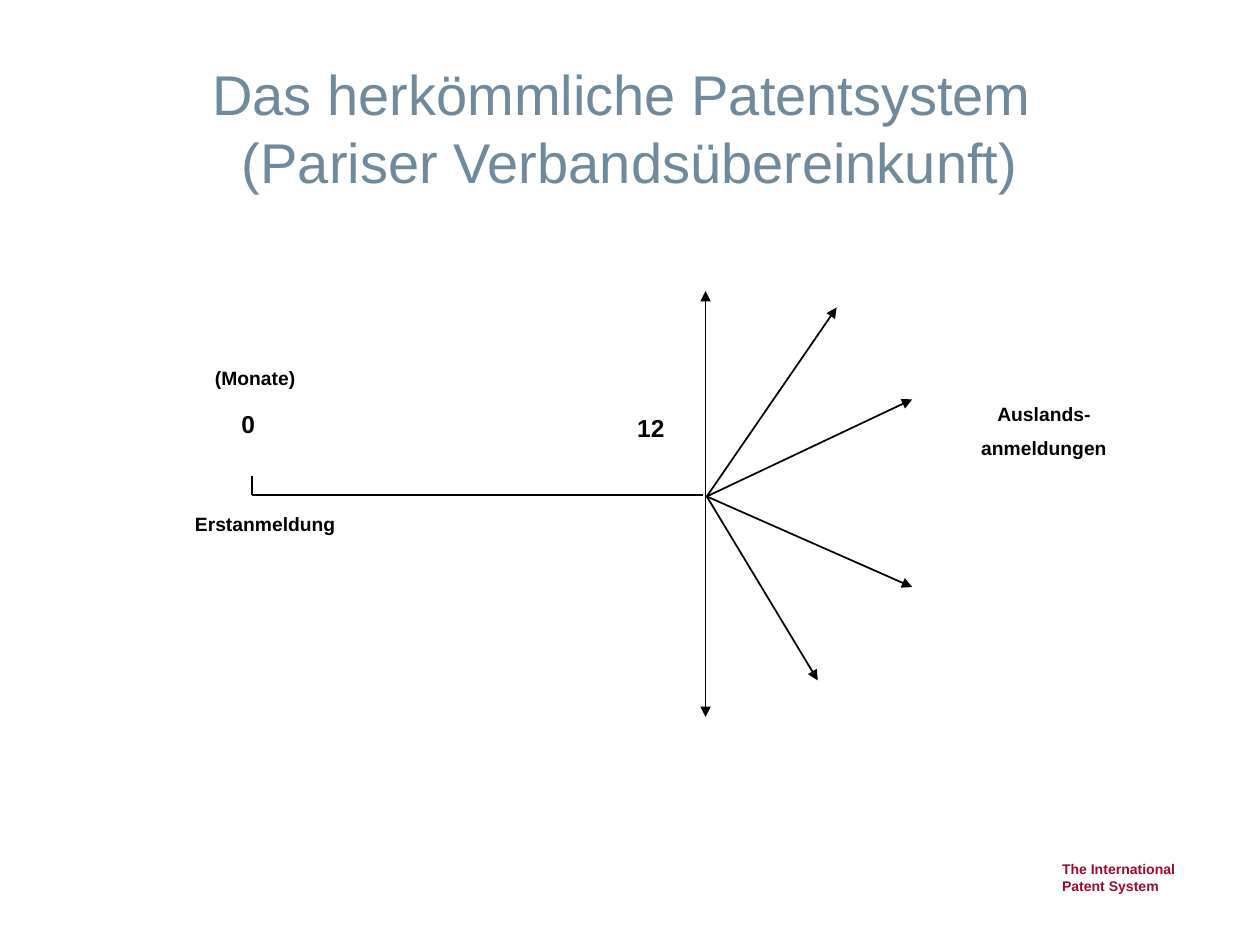
"""Build a slide on the traditional patent system under the Paris Convention."""

from dataclasses import dataclass

import pptx
import pptx.dml.color
import pptx.enum.shapes
import pptx.enum.text
import pptx.oxml
import pptx.oxml.ns
import pptx.util

Pt = pptx.util.Pt
Align = pptx.enum.text.PP_ALIGN
Anchor = pptx.enum.text.MSO_ANCHOR

COLORS = {"title": "70899B", "ink": "000000", "footer": "9D0A2B"}
FONT = "Arial"
ORIGIN = (403.9, 283.7)


@dataclass(frozen=True)
class Label:
    lines: tuple[str, ...]
    left: float
    top: float
    width: float
    height: float
    size: float = 11
    color: str = "ink"
    align: Align = Align.CENTER
    wrap: bool = False


@dataclass(frozen=True)
class Line:
    start: tuple[float, float]
    end: tuple[float, float]
    arrow: bool = True


LABELS = (
    Label(("The International\vPatent System",), 599.8, 488.2, 112.3, 23.8,
          8, "footer", Align.LEFT, True),
    Label(("0",), 122.4, 230.4, 38.9, 41.8, 14),
    Label(("12",), 345.6, 232.6, 52.6, 41, 14),
    Label(("Erstanmeldung",), 103.7, 289.4, 95.8, 20.9),
    Label(("Auslands-", "anmeldungen"), 553, 226.1, 87.1, 41),
    Label(("(Monate)",), 115.2, 205.9, 61.2, 20.9),
)
FAN_ENDS = ((521.3, 335.5), (521.3, 228.2), (478.1, 175.7), (467.3, 388.8))
LINES = (
    Line((144, 283), (402, 283), False),
    Line((144, 272), (144, 283), False),
    Line((403.2, 295.9), (403.2, 166.3)),
    Line((403.2, 283.7), (403.2, 409.7)),
    *(Line(ORIGIN, end) for end in FAN_ENDS),
)


def set_values(target: object, values: dict) -> None:
    for name, value in values.items():
        setattr(target, name, value)


def format_para(para, size: float, color: str, align: Align, bold: bool) -> None:
    para.alignment = align
    set_values(para.font, {"name": FONT, "size": Pt(size), "bold": bold})
    para.font.color.rgb = pptx.dml.color.RGBColor.from_string(COLORS[color])


def draw_title(page, text: str) -> None:
    title = page.shapes.title
    set_values(title, {"left": Pt(36), "top": Pt(21.6),
                       "width": Pt(648), "height": Pt(102.2)})
    set_values(title.text_frame, {
        "text": text, "word_wrap": True, "vertical_anchor": Anchor.MIDDLE,
        "auto_size": pptx.enum.text.MSO_AUTO_SIZE.NONE})
    format_para(title.text_frame.paragraphs[0], 32, "title", Align.CENTER, False)


def draw_label(page, label: Label) -> None:
    box = page.shapes.add_textbox(
        Pt(label.left), Pt(label.top), Pt(label.width), Pt(label.height))
    set_values(box.text_frame, {
        "text": "\n".join(label.lines), "word_wrap": label.wrap,
        "vertical_anchor": Anchor.TOP,
        "margin_left": Pt(7.2), "margin_right": Pt(7.2),
        "margin_top": Pt(3.6), "margin_bottom": Pt(3.6)})
    for index, para in enumerate(box.text_frame.paragraphs):
        format_para(para, label.size, label.color, label.align, True)
        para.space_before = Pt(label.size * 0.57 if index else 0)


def draw_line(page, line: Line) -> None:
    connector = page.shapes.add_connector(
        pptx.enum.shapes.MSO_CONNECTOR.STRAIGHT,
        *(Pt(value) for value in line.start + line.end))
    connector.line.width = Pt(1)
    connector.line.color.rgb = pptx.dml.color.RGBColor.from_string(COLORS["ink"])
    namespace = pptx.oxml.ns.nsdecls("a")
    if line.arrow:
        connector.line._get_or_add_ln().append(
            pptx.oxml.parse_xml(f'<a:tailEnd {namespace} type="triangle"/>'))
    connector._element.spPr.append(
        pptx.oxml.parse_xml(f"<a:effectLst {namespace}/>"))


def main() -> None:
    deck = pptx.Presentation()
    set_values(deck, {"slide_width": Pt(720), "slide_height": Pt(540)})
    page = deck.slides.add_slide(deck.slide_layouts.get_by_name("Title Only"))
    draw_title(page, "Das herkömmliche Patentsystem \v(Pariser Verbandsübereinkunft)")
    for line in LINES:
        draw_line(page, line)
    for label in LABELS:
        draw_label(page, label)
    deck.save("out.pptx")


if __name__ == "__main__":
    main()
